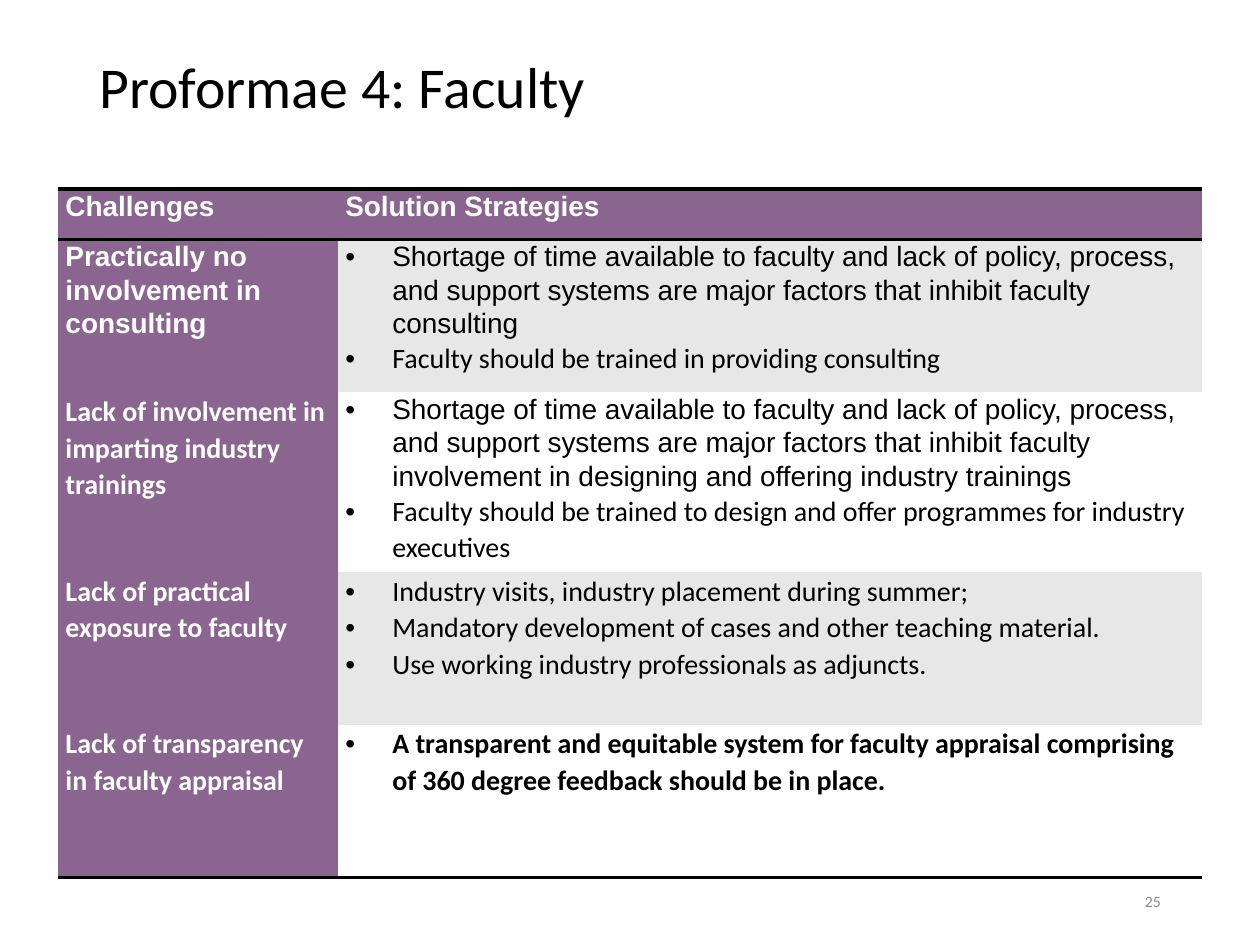
"""Build the faculty challenges and solution strategies slide."""
import lxml.etree
import pptx
import pptx.dml.color
import pptx.enum.text
import pptx.oxml.ns
import pptx.util

Cm, Pt = pptx.util.Cm, pptx.util.Pt
qn = pptx.oxml.ns.qn
ALIGN = pptx.enum.text.PP_ALIGN
HEADERS = ["Challenges", "Solution Strategies"]
SHORTAGE = ("Shortage of time available to faculty and lack of policy, process, "
            "and support systems are major factors that inhibit faculty ")
ROWS = [
    (("Practically no involvement in consulting", "Arial"),
     [(SHORTAGE + "consulting", "Arial"),
      ("Faculty should be trained in providing consulting", "Calibri")]),
    (("Lack of involvement in imparting industry trainings", "Calibri"),
     [(SHORTAGE + "involvement in designing and offering industry trainings", "Arial"),
      ("Faculty should be trained to design and offer programmes for industry executives",
       "Calibri")]),
    (("Lack of practical exposure to faculty", "Calibri"),
     [("Industry visits, industry placement during summer;", "Calibri"),
      ("Mandatory development of cases and other teaching material.", "Calibri"),
      ("Use working industry professionals as adjuncts.", "Calibri")]),
    (("Lack of transparency in faculty appraisal", "Calibri"),
     [("A transparent and equitable system for faculty appraisal comprising "
       "of 360 degree feedback should be in place.", "Calibri")]),
]


def rgb(value):
    return pptx.dml.color.RGBColor.from_string(value)


class Deck:
    purple, grey, white, black, muted = "89658F", "E7E7E7", "FFFFFF", "000000", "898989"

    def __init__(self, prs):
        self.s = prs.slides.add_slide(prs.slide_layouts[5])

    def run(self, p, text, size, color, font="Calibri", bold=False):
        r = p.add_run()
        r.text = text
        r.font.size, r.font.name, r.font.bold = Pt(size), font, bold
        r.font.color.rgb = rgb(color)

    def title(self, text):
        sp = self.s.shapes.title
        sp.left, sp.top, sp.width, sp.height = Cm(1.75), Cm(0.43), Cm(21.9), Cm(2.77)
        tf = sp.text_frame
        tf.auto_size = pptx.enum.text.MSO_AUTO_SIZE.NONE
        tf.vertical_anchor = pptx.enum.text.MSO_ANCHOR.MIDDLE
        p = tf.paragraphs[0]
        p.alignment, p.line_spacing = ALIGN.LEFT, 0.9
        self.run(p, text, 33, self.black)

    def page_number(self, text):
        sp = self.s.shapes.add_textbox(Cm(17.93), Cm(17.65), Cm(5.72), Cm(1.02))
        tf = sp.text_frame
        tf.word_wrap = True
        tf.vertical_anchor = pptx.enum.text.MSO_ANCHOR.MIDDLE
        p = tf.paragraphs[0]
        p.alignment = ALIGN.RIGHT
        self.run(p, text, 9, self.muted)

    def borders(self, cell, ruled):
        tcPr = cell._tc.get_or_add_tcPr()
        for side in "LRTB":
            ln = lxml.etree.SubElement(tcPr, qn(f"a:ln{side}"), w=str(Pt(2)))
            if side in ruled:
                fill = lxml.etree.SubElement(ln, qn("a:solidFill"))
                lxml.etree.SubElement(fill, qn("a:srgbClr"), val=self.black)
            else:
                lxml.etree.SubElement(ln, qn("a:noFill"))

    def bullet(self, p):
        pPr = p._p.get_or_add_pPr()
        pPr.set("marL", str(Cm(0.95)))
        pPr.set("indent", str(-Cm(0.95)))
        lxml.etree.SubElement(pPr, qn("a:buFont"), typeface="Arial")
        lxml.etree.SubElement(pPr, qn("a:buChar"), char="•")

    def cell(self, cell, items, fill, color, bold, ruled, bulleted=False):
        self.borders(cell, ruled)
        cell.fill.solid()
        cell.fill.fore_color.rgb = rgb(fill)
        cell.margin_left = cell.margin_right = Cm(0.15)
        cell.margin_top = cell.margin_bottom = 0
        tf = cell.text_frame
        for i, (text, font) in enumerate(items):
            p = tf.add_paragraph() if i else tf.paragraphs[0]
            p.line_spacing = 1.07
            if bulleted:
                self.bullet(p)
            self.run(p, text, 16, color, font, bold)

    def table(self, headers, rows):
        frame = self.s.shapes.add_table(len(rows) + 1, 2, Cm(1.17), Cm(3.81),
                                        Cm(23.06), Cm(13.34))
        tbl = frame.table
        tbl.first_row = tbl.horz_banding = False
        tbl.columns[0].width, tbl.columns[1].width = Cm(5.64), Cm(17.42)
        tbl.rows[0].height = Cm(1.02)
        for col, text in enumerate(headers):
            self.cell(tbl.cell(0, col), [(text, "Arial")], self.purple, self.white, True, "TB")
        last = len(rows)
        for i, (challenge, strategies) in enumerate(rows, 1):
            tbl.rows[i].height = Cm(3.08)
            ruled = ("T" if i == 1 else "") + ("B" if i == last else "")
            self.cell(tbl.cell(i, 0), [challenge], self.purple, self.white, True, ruled)
            self.cell(tbl.cell(i, 1), strategies, self.grey if i % 2 else self.white,
                      self.black, i == last, ruled, bulleted=True)


def main():
    prs = pptx.Presentation()
    prs.slide_width, prs.slide_height = Cm(25.4), Cm(19.05)
    deck = Deck(prs)
    deck.title("Proformae 4: Faculty")
    deck.page_number("25")
    deck.table(HEADERS, ROWS)
    prs.save("out.pptx")


if __name__ == "__main__":
    main()
